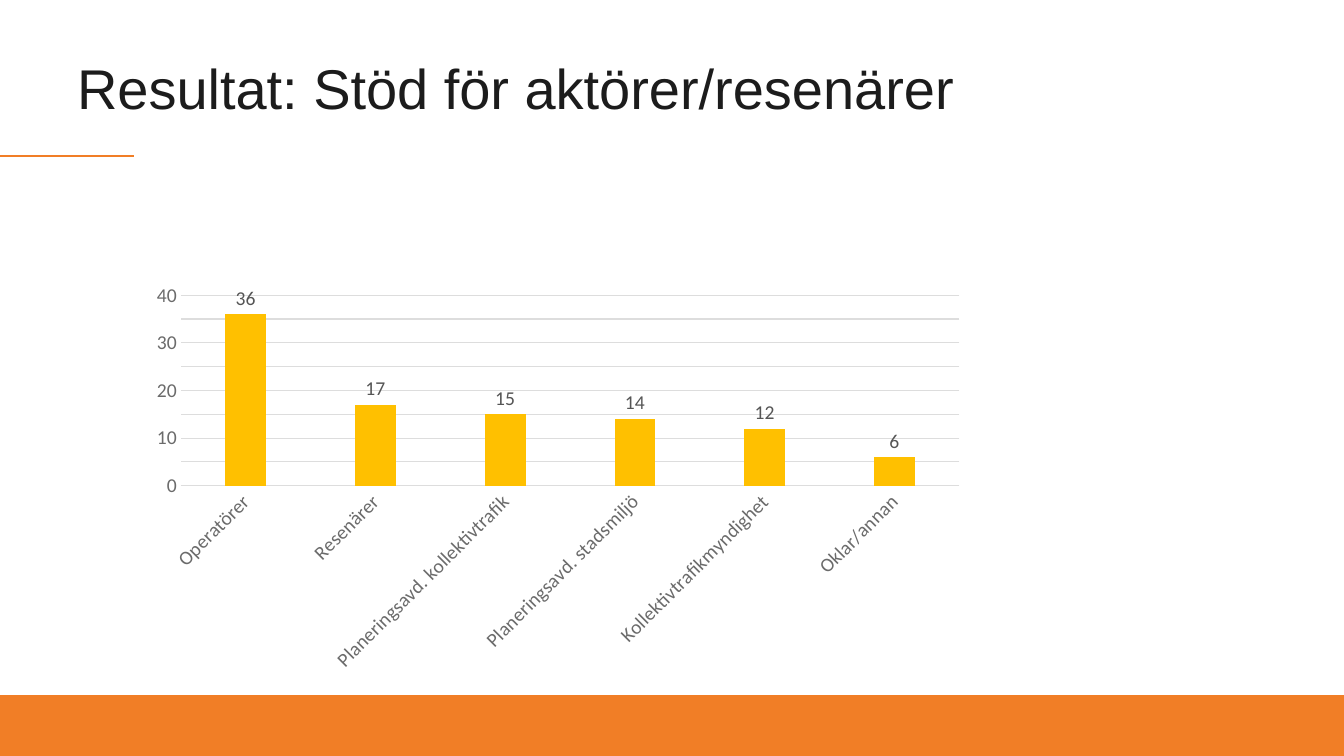
from pptx import Presentation
from pptx.chart.data import CategoryChartData
from pptx.dml.color import RGBColor
from pptx.enum.chart import XL_CHART_TYPE, XL_LABEL_POSITION, XL_TICK_MARK
from pptx.enum.shapes import MSO_CONNECTOR, MSO_SHAPE
from pptx.enum.text import MSO_ANCHOR, PP_ALIGN
from pptx.oxml.ns import qn
from pptx.util import Pt
from lxml import etree

TITLE = "Resultat: Stöd för aktörer/resenärer"
SUPPORT = {
    "Operatörer": 36,
    "Resenärer": 17,
    "Planeringsavd. kollektivtrafik": 15,
    "Planeringsavd. stadsmiljö": 14,
    "Kollektivtrafikmyndighet": 12,
    "Oklar/annan": 6,
}

WIDE, HIGH = 1344, 756
TITLE_BOX = (67, 30, 1210, 126)
CHART_BOX = (140, 275, 836, 405)
BAND_TOP = 695
RULE_Y, RULE_END = 156, 134

ORANGE = RGBColor(0xF1, 0x7E, 0x26)
YELLOW = RGBColor(0xFF, 0xC0, 0x00)
INK = RGBColor(0x1C, 0x1C, 0x1C)
DARK = RGBColor(0x55, 0x55, 0x55)
GREY = RGBColor(0x6B, 0x6B, 0x6B)
PALE = RGBColor(0xDD, 0xDD, 0xDD)

COLUMN = XL_CHART_TYPE.COLUMN_CLUSTERED
OUTSIDE = XL_LABEL_POSITION.OUTSIDE_END
NO_TICK = XL_TICK_MARK.NONE
SCALE = 914400 / 100.8
TILT = -45 * 60000


def px(*sizes):
    return [round(size * SCALE) for size in sizes]


def style(font, name, size, color):
    font.name, font.size, font.color.rgb = name, Pt(size), color


def draw_line(line, color, width):
    line.color.rgb, line.width = color, Pt(width)


def add_frame(slide):
    band = slide.shapes.add_shape(
        MSO_SHAPE.RECTANGLE, *px(0, BAND_TOP, WIDE, HIGH - BAND_TOP))
    band.shadow.inherit = False
    band.fill.solid()
    band.fill.fore_color.rgb = ORANGE
    band.line.fill.background()
    rule = slide.shapes.add_connector(
        MSO_CONNECTOR.STRAIGHT, *px(0, RULE_Y, RULE_END, RULE_Y))
    draw_line(rule.line, ORANGE, 1.5)
    etree.SubElement(rule._element.spPr, qn("a:effectLst"))


def add_title(slide):
    title = slide.shapes.title
    title.left, title.top, title.width, title.height = px(*TITLE_BOX)
    frame = title.text_frame
    frame.text = TITLE
    frame.vertical_anchor = MSO_ANCHOR.MIDDLE
    line = frame.paragraphs[0]
    line.alignment, line.line_spacing = PP_ALIGN.LEFT, 0.8
    style(line.runs[0].font, "Arial", 40, INK)


def add_bars(slide):
    data = CategoryChartData()
    data.categories = list(SUPPORT)
    data.add_series("Series 1", list(SUPPORT.values()))
    chart = slide.shapes.add_chart(COLUMN, *px(*CHART_BOX), data).chart
    chart.has_legend = chart.has_title = False
    style(chart.font, "Calibri", 14, INK)

    plot = chart.plots[0]
    plot.gap_width, plot.overlap, plot.vary_by_categories = 219, -27, False
    fill = plot.series[0].format.fill
    fill.solid()
    fill.fore_color.rgb = YELLOW
    plot.has_data_labels = True
    labels = plot.data_labels
    labels.show_value, labels.position = True, OUTSIDE
    style(labels.font, "Calibri", 14, DARK)

    names, values = chart.category_axis, chart.value_axis
    for axis in (names, values):
        axis.major_tick_mark = axis.minor_tick_mark = NO_TICK
        style(axis.tick_labels.font, "Calibri", 14, GREY)
    draw_line(names.format.line, PALE, 0.75)
    names._element.txPr.find(qn("a:bodyPr")).set("rot", str(TILT))
    values.minimum_scale, values.maximum_scale, values.major_unit = 0, 40, 5
    values.format.line.fill.background()
    draw_line(values.major_gridlines.format.line, PALE, 0.75)


def main():
    deck = Presentation()
    deck.slide_width, deck.slide_height = px(WIDE, HIGH)
    slide = deck.slides.add_slide(deck.slide_layouts[5])
    add_frame(slide)
    add_title(slide)
    add_bars(slide)
    deck.save("out.pptx")


if __name__ == "__main__":
    main()
